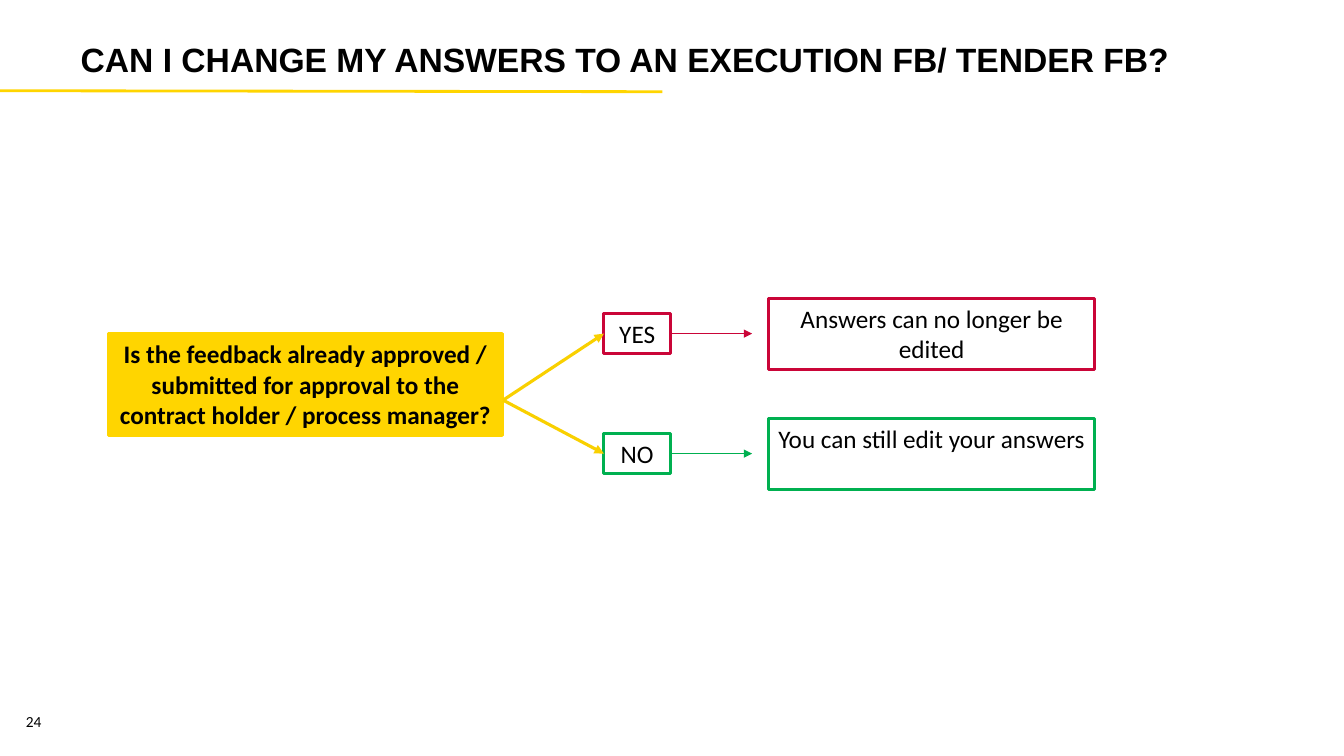
from dataclasses import dataclass

from lxml.etree import SubElement
from pptx import Presentation
from pptx.dml.color import RGBColor
from pptx.enum.shapes import MSO_CONNECTOR as CONN, MSO_SHAPE as SHAPE
from pptx.enum.text import MSO_ANCHOR as ANCHOR, MSO_AUTO_SIZE as AUTO, PP_ALIGN as ALIGN
from pptx.oxml.ns import qn
from pptx.shapes.autoshape import Shape
from pptx.shapes.connector import Connector
from pptx.slide import Slide
from pptx.text.text import TextFrame
from pptx.util import Pt

PX = 9144  # EMU per px, 100 px to the inch
LEFT_SIDE, RIGHT_SIDE = 1, 3


@dataclass(frozen=True)
class Theme:
    yellow: str = "FFD500"
    branch: str = "F9D000"
    red: str = "CA0538"
    green: str = "00B050"
    text: str = "000000"
    background: str = "FFFFFF"
    title_font: str = "Arial"
    body_font: str = "Calibri"
    title_pt: int = 24
    body_pt: int = 18
    number_pt: int = 11
    box_line: float = 2.25
    rule_line: float = 2
    arrow_line: float = 0.75


@dataclass(frozen=True)
class Outcome:
    label: str
    answer: str
    colour: str
    middle: int  # vertical centre of the row, px


THEME = Theme()
OUTCOMES = [
    Outcome("YES", "Answers can no longer be edited", THEME.red, 331),
    Outcome("NO", "You can still edit your answers", THEME.green, 450),
]
BRANCH_START = (499, 397)
LABEL_X, LABEL_W, LABEL_H = 599, 66, 40
ANSWER_X, ANSWER_W, ANSWER_H = 762, 324, 71
ARROW_END = 746


def set_text(tf: TextFrame, text: str, size: int, font: str = THEME.body_font,
             bold: bool = False, align: ALIGN = ALIGN.CENTER,
             anchor: ANCHOR = ANCHOR.TOP) -> None:
    tf.text = text
    tf.word_wrap = True
    tf.auto_size = AUTO.NONE
    tf.vertical_anchor = anchor
    p = tf.paragraphs[0]
    p.alignment = align
    f = p.runs[0].font
    f.name, f.size, f.bold = font, Pt(size), bold
    f.color.rgb = RGBColor.from_string(THEME.text)


def add_box(s: Slide, x: int, y: int, w: int, h: int, text: str, line: str,
            fill: str | None = None, bold: bool = False) -> Shape:
    sp = s.shapes.add_shape(SHAPE.RECTANGLE, x * PX, y * PX, w * PX, h * PX)
    sp.shadow.inherit = False
    if fill:
        sp.fill.solid()
        sp.fill.fore_color.rgb = RGBColor.from_string(fill)
    else:
        sp.fill.background()
    sp.line.color.rgb = RGBColor.from_string(line)
    sp.line.width = Pt(THEME.box_line)
    set_text(sp.text_frame, text, THEME.body_pt, bold=bold)
    return sp


def add_line(s: Slide, x1: int, y1: int, x2: int, y2: int, colour: str,
             width: float, arrow: bool = True) -> Connector:
    c = s.shapes.add_connector(CONN.STRAIGHT, x1 * PX, y1 * PX, x2 * PX, y2 * PX)
    c.line.color.rgb = RGBColor.from_string(colour)
    c.line.width = Pt(width)
    if arrow:
        SubElement(c.line._get_or_add_ln(), qn("a:tailEnd"), type="triangle")
    SubElement(c._element.spPr, qn("a:effectLst"))
    return c


def add_outcome(s: Slide, o: Outcome) -> None:
    label = add_box(s, LABEL_X, o.middle - LABEL_H // 2, LABEL_W, LABEL_H,
                    o.label, o.colour)
    add_box(s, ANSWER_X, o.middle - ANSWER_H // 2, ANSWER_W, ANSWER_H,
            o.answer, o.colour)
    branch = add_line(s, *BRANCH_START, LABEL_X, o.middle, THEME.branch, THEME.box_line)
    branch.end_connect(label, LEFT_SIDE)
    arrow = add_line(s, LABEL_X + LABEL_W, o.middle, ARROW_END, o.middle,
                     o.colour, THEME.arrow_line)
    arrow.begin_connect(label, RIGHT_SIDE)


def main() -> None:
    prs = Presentation()
    prs.slide_width, prs.slide_height = 1333 * PX, 750 * PX
    s = prs.slides.add_slide(prs.slide_layouts[5])
    s.background.fill.solid()
    s.background.fill.fore_color.rgb = RGBColor.from_string(THEME.background)

    # Title and the rule under it
    add_line(s, 0, 90, 657, 91, THEME.yellow, THEME.rule_line, arrow=False)
    title = s.shapes.title
    title.left, title.top, title.width, title.height = (
        v * PX for v in (70, 19, 1174, 85))
    set_text(title.text_frame, "CAN I CHANGE MY ANSWERS TO AN EXECUTION FB/ TENDER FB?",
             THEME.title_pt, THEME.title_font, True, ALIGN.LEFT, ANCHOR.MIDDLE)
    title.text_frame.paragraphs[0].line_spacing = Pt(24)

    # Slide number
    number = s.shapes.add_textbox(0, 694 * PX, 67 * PX, 36 * PX)
    set_text(number.text_frame, "24", THEME.number_pt, anchor=ANCHOR.BOTTOM)

    # Question and its two outcomes
    add_box(s, 108, 331, 390, 101,
            "Is the feedback already approved / submitted for approval to the "
            "contract holder / process manager?",
            THEME.yellow, THEME.yellow, bold=True)
    for o in OUTCOMES:
        add_outcome(s, o)

    prs.save("out.pptx")


if __name__ == "__main__":
    main()
